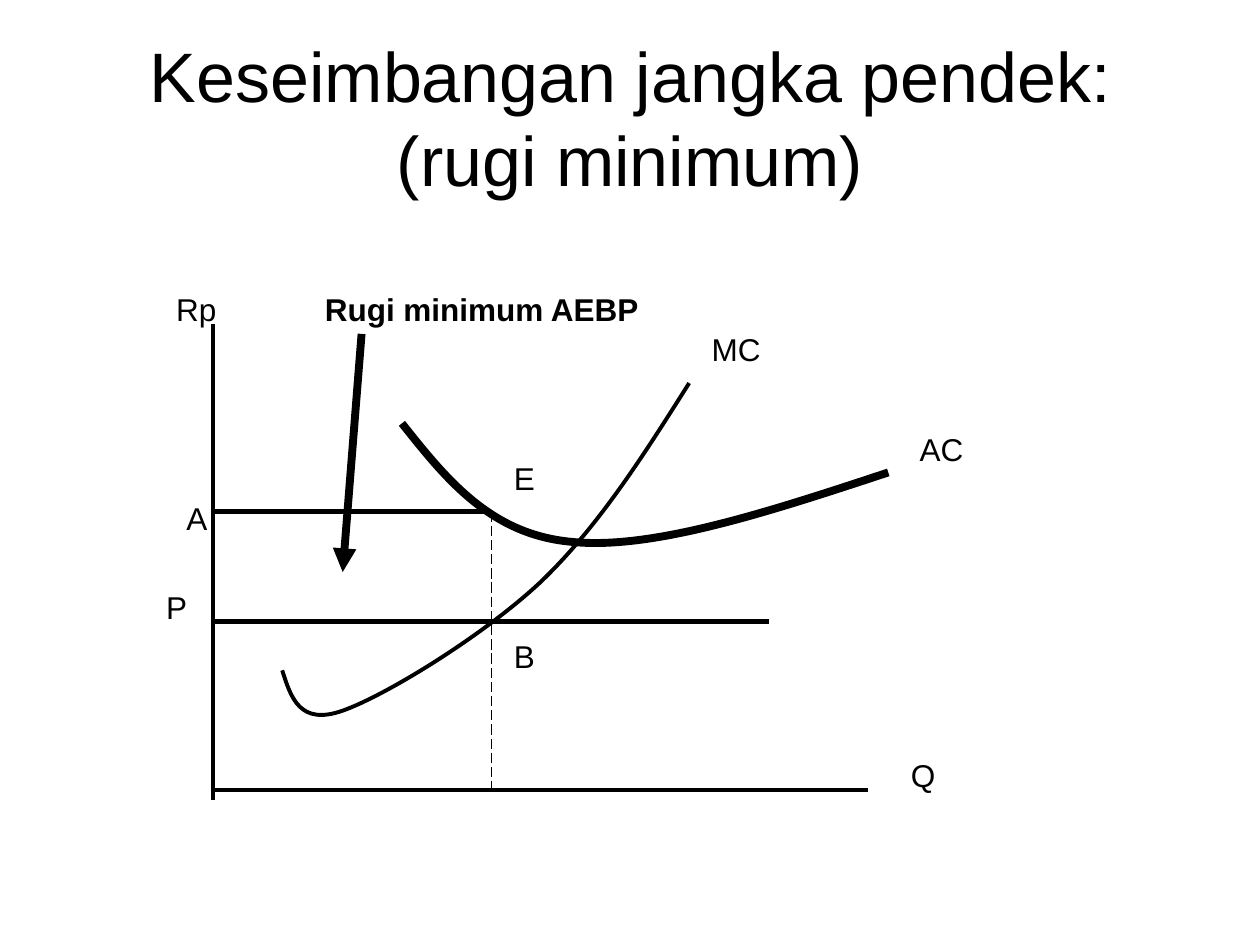
"""Draw the short-run equilibrium diagram on a grid of 100 columns by 75 rows."""
from dataclasses import dataclass
from typing import NamedTuple, Optional

from lxml import etree
from pptx import Presentation, util as u
from pptx.dml.color import RGBColor
from pptx.enum import dml, shapes, text
from pptx.oxml import ns

COLUMNS, ROWS = 100, 75
CELL = u.Inches(10) // COLUMNS


class Point(NamedTuple):
    column: float
    row: float

    def emu(self) -> tuple[int, int]:
        return round(self.column * CELL), round(self.row * CELL)


@dataclass(frozen=True)
class Theme:
    ink: RGBColor = RGBColor(0, 0, 0)
    font: str = "Arial"
    title_size: float = 40
    label_size: float = 18
    hair: float = 0.75
    thin: float = 2.25
    medium: float = 3
    thick: float = 4.5


@dataclass(frozen=True)
class Label:
    wording: str
    corner: Point
    width: float
    height: float = 4
    size: float = Theme.label_size
    bold: bool = False
    align: text.PP_ALIGN = text.PP_ALIGN.LEFT


@dataclass(frozen=True)
class Segment:
    start: Point
    end: Point
    weight: float
    dash: Optional[dml.MSO_LINE] = None
    arrow: bool = False


@dataclass(frozen=True)
class Curve:
    start: Point
    controls: tuple[Point, ...]
    weight: float


THEME = Theme()
AXIS, OUTPUT = 16.9, 39
COST, PRICE, BASE = 40.6, 49.3, 62.7

AXES_AND_PRICE = (
    Segment(Point(AXIS, 25.7), Point(AXIS, 63.5), THEME.thin),
    Segment(Point(AXIS, BASE), Point(68.9, BASE), THEME.thin),
    Segment(Point(AXIS, PRICE), Point(61, PRICE), THEME.medium),
)
MARGINAL_COST = Curve(
    Point(22.4, 53.2),
    (Point(23.1, 55.4), Point(23.8, 57.6), Point(27.2, 56.4),
     Point(30.6, 55.2), Point(38.3, 50.5), Point(42.9, 46.2),
     Point(47.5, 41.8), Point(51.1, 36.1), Point(54.7, 30.4)),
    THEME.thin,
)
AVERAGE_COST = Curve(
    Point(31.9, 33.6),
    (Point(35.4, 38), Point(38.9, 42.4), Point(45.3, 43),
     Point(51.7, 43.7), Point(61.1, 40.6), Point(70.5, 37.5)),
    THEME.thick,
)
LOSS_GUIDES = (
    Segment(Point(OUTPUT, COST), Point(OUTPUT, BASE), THEME.hair, dml.MSO_LINE.LONG_DASH),
    Segment(Point(OUTPUT, COST), Point(AXIS, COST), THEME.medium),
    Segment(Point(28.7, 26.5), Point(27.2, 45.4), THEME.thick, arrow=True),
)
LABELS = (
    Label("Keseimbangan jangka pendek: (rugi minimum)", Point(5, 3), 90, 12.5,
          THEME.title_size, align=text.PP_ALIGN.CENTER),
    Label("A", Point(13.8, 39.1), 3.9),
    Label("E", Point(39.8, 35.9), 8.7),
    Label("B", Point(39.8, 50.1), 7.1),
    Label("P", Point(12.2, 46.2), 5.5),
    Label("Rp", Point(13, 22.5), 11),
    Label("Q", Point(71.3, 59.5), 11.8),
    Label("Rugi minimum AEBP", Point(24.8, 22.5), 44.9, bold=True),
    Label("AC", Point(72, 33.6), 9.4),
    Label("MC", Point(55.5, 25.7), 9.4),
)


def add_label(page, label: Label) -> None:
    size = Point(label.width, label.height).emu()
    frame = page.shapes.add_textbox(*label.corner.emu(), *size).text_frame
    frame.word_wrap = True
    frame.vertical_anchor = text.MSO_ANCHOR.MIDDLE
    para = frame.paragraphs[0]
    para.text = label.wording
    para.alignment = label.align
    para.font.name = THEME.font
    para.font.size = u.Pt(label.size)
    para.font.bold = label.bold
    para.font.color.rgb = THEME.ink


def style_line(line, weight: float) -> None:
    line.color.rgb = THEME.ink
    line.width = u.Pt(weight)


def add_segment(page, segment: Segment) -> None:
    connector = page.shapes.add_connector(
        shapes.MSO_CONNECTOR.STRAIGHT, *segment.start.emu(), *segment.end.emu())
    style_line(connector.line, segment.weight)
    if segment.dash is not None:
        connector.line.dash_style = segment.dash
    properties = connector._element.spPr
    if segment.arrow:
        outline = properties.find(ns.qn("a:ln"))
        etree.SubElement(outline, ns.qn("a:tailEnd"), type="triangle")
    etree.SubElement(properties, ns.qn("a:effectLst"))


def add_curve(page, curve: Curve) -> None:
    builder = page.shapes.build_freeform(*curve.start.emu())
    builder.add_line_segments([point.emu() for point in curve.controls], close=False)
    shape = builder.convert_to_shape()
    shape.shadow.inherit = False
    shape.fill.background()
    style_line(shape.line, curve.weight)
    outline = next(shape._element.iter(ns.qn("a:path")))
    steps = outline.findall(ns.qn("a:lnTo"))
    for first in range(0, len(steps), 3):
        bezier = etree.SubElement(outline, ns.qn("a:cubicBezTo"))
        for step in steps[first:first + 3]:
            bezier.append(step[0])
            outline.remove(step)


def main() -> None:
    deck = Presentation()
    deck.slide_width, deck.slide_height = COLUMNS * CELL, ROWS * CELL
    page = deck.slides.add_slide(deck.slide_layouts[6])
    for segment in AXES_AND_PRICE:
        add_segment(page, segment)
    for curve in (MARGINAL_COST, AVERAGE_COST):
        add_curve(page, curve)
    for segment in LOSS_GUIDES:
        add_segment(page, segment)
    for label in LABELS:
        add_label(page, label)
    deck.save("out.pptx")


if __name__ == "__main__":
    main()
